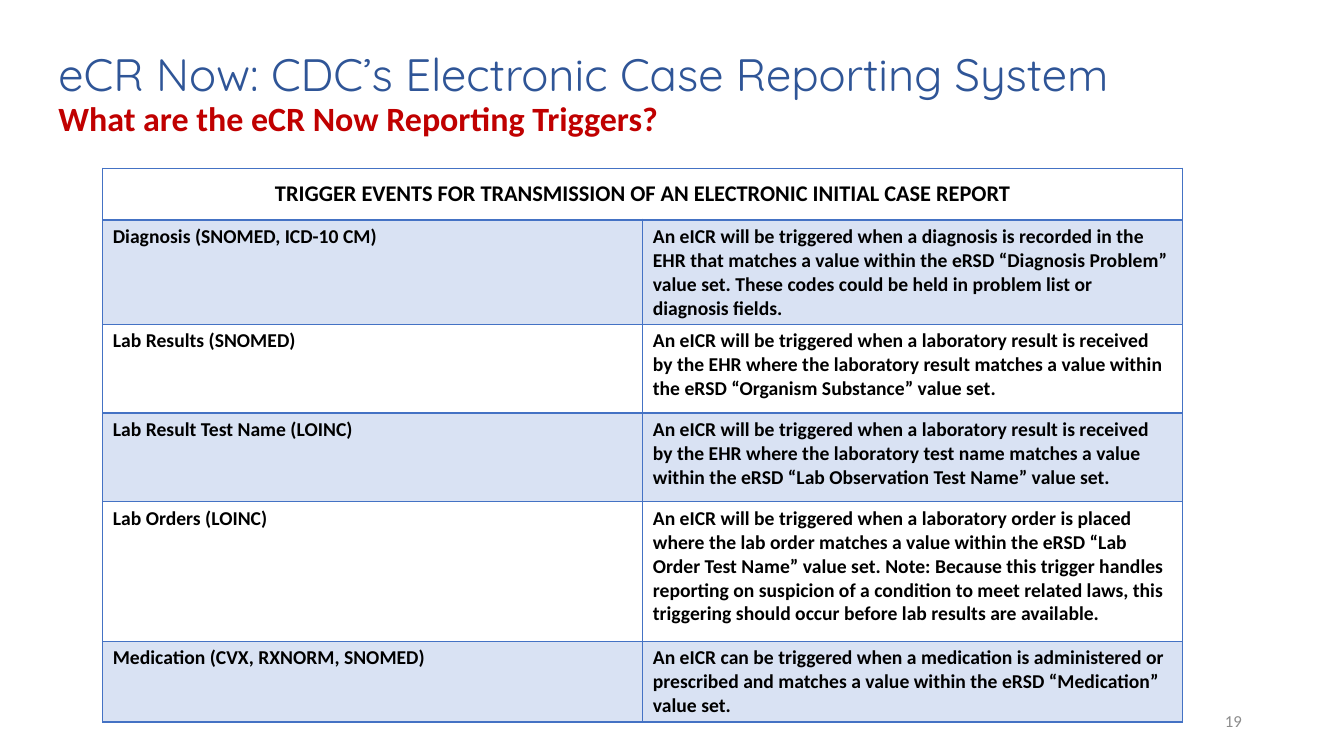
from lxml import etree
from pptx import Presentation
from pptx.dml.color import RGBColor
from pptx.enum.text import MSO_ANCHOR, MSO_AUTO_SIZE, PP_ALIGN
from pptx.oxml.ns import qn
from pptx.util import Cm, Pt

MIDDLE, TOP = MSO_ANCHOR.MIDDLE, MSO_ANCHOR.TOP
LEFT, CENTER, RIGHT = PP_ALIGN.LEFT, PP_ALIGN.CENTER, PP_ALIGN.RIGHT
NO_AUTOFIT = MSO_AUTO_SIZE.NONE
TITLE_ONLY = 5

TITLE_BLUE = RGBColor(0x2F, 0x55, 0x97)
SUBTITLE_RED = RGBColor(0xC0, 0x00, 0x00)
TABLE_BLUE = RGBColor(0x44, 0x72, 0xC4)
PAGE_GRAY = RGBColor(0x8C, 0x8C, 0x8C)
BLACK = RGBColor(0x00, 0x00, 0x00)

HEADING = "TRIGGER EVENTS FOR TRANSMISSION OF AN ELECTRONIC INITIAL CASE REPORT"
TRIGGERS = [
    ("Diagnosis (SNOMED, ICD-10 CM)",
     "An eICR will be triggered when a diagnosis is recorded in the EHR that "
     "matches a value within the eRSD “Diagnosis Problem” value set. These codes "
     "could be held in problem list or diagnosis fields."),
    ("Lab Results (SNOMED)",
     "An eICR will be triggered when a laboratory result is received by the EHR "
     "where the laboratory result matches a value within the eRSD “Organism "
     "Substance” value set."),
    ("Lab Result Test Name (LOINC)",
     "An eICR will be triggered when a laboratory result is received by the EHR "
     "where the laboratory test name matches a value within the eRSD “Lab "
     "Observation Test Name” value set."),
    ("Lab Orders (LOINC)",
     "An eICR will be triggered when a laboratory order is placed where the lab "
     "order matches a value within the eRSD “Lab Order Test Name” value set. Note: "
     "Because this trigger handles reporting on suspicion of a condition to meet "
     "related laws, this triggering should occur before lab results are available."),
    ("Medication (CVX, RXNORM, SNOMED)",
     "An eICR can be triggered when a medication is administered or prescribed and "
     "matches a value within the eRSD “Medication” value set."),
]
ROW_HEIGHTS = [1.3, 2.24, 2.24, 2.24, 3.51, 1.75]
COLUMN_WIDTH = 13.61


def format_run(run, size, color, bold=False, font="Calibri"):
    run.font.name = font
    run.font.size = Pt(size)
    run.font.bold = bold
    run.font.color.rgb = color


def set_title(slide):
    title = slide.shapes.title
    title.left, title.top, title.width, title.height = (
        Cm(1.22), Cm(1.19), Cm(30.61), Cm(2.44))
    frame = title.text_frame
    frame.auto_size = NO_AUTOFIT
    frame.word_wrap = True
    frame.vertical_anchor = MIDDLE
    heading = frame.paragraphs[0]
    heading.text = ("eCR Now: CDC’s Electronic Case Reporting System\v"
                    "What are the eCR Now Reporting Triggers?")
    heading.alignment = LEFT
    heading.line_spacing = 0.9
    system, question = heading.runs
    format_run(system, 32.4, TITLE_BLUE, font="Quicksand")
    format_run(question, 24.3, SUBTITLE_RED, bold=True)


def add_page_number(slide, number):
    box = slide.shapes.add_textbox(Cm(23.93), Cm(17.65), Cm(7.62), Cm(1.02))
    frame = box.text_frame
    frame.word_wrap = True
    frame.vertical_anchor = MIDDLE
    frame.text = number
    frame.paragraphs[0].alignment = RIGHT
    format_run(frame.paragraphs[0].runs[0], 12, PAGE_GRAY)


def set_borders(cell, bottom_width):
    properties = cell._tc.get_or_add_tcPr()
    for side, width in (("L", 1), ("R", 1), ("T", 1), ("B", bottom_width)):
        line = etree.SubElement(properties, qn(f"a:ln{side}"), w=str(Pt(width)))
        fill = etree.SubElement(line, qn("a:solidFill"))
        etree.SubElement(fill, qn("a:srgbClr"), val=str(TABLE_BLUE))


def tint(cell):
    """Fill the cell with the table blue at 20 % opacity."""
    cell.fill.solid()
    cell.fill.fore_color.rgb = TABLE_BLUE
    color = cell._tc.tcPr.find(qn("a:solidFill")).find(qn("a:srgbClr"))
    etree.SubElement(color, qn("a:alpha"), val="20000")


def write_cell(cell, text, size, alignment=LEFT, anchor=TOP):
    cell.text = text
    cell.vertical_anchor = anchor
    paragraph = cell.text_frame.paragraphs[0]
    paragraph.alignment = alignment
    format_run(paragraph.runs[0], size, BLACK, bold=True)


def add_trigger_table(slide):
    table = slide.shapes.add_table(
        len(ROW_HEIGHTS), 2, Cm(2.59), Cm(4.24),
        Cm(2 * COLUMN_WIDTH), Cm(sum(ROW_HEIGHTS))).table
    for column in table.columns:
        column.width = Cm(COLUMN_WIDTH)
    for index, (row, height) in enumerate(zip(table.rows, ROW_HEIGHTS)):
        row.height = Cm(height)
        for cell in row.cells:
            set_borders(cell, bottom_width=1 if index else 2)
            if index % 2:
                tint(cell)
            else:
                cell.fill.background()

    table.cell(0, 0).merge(table.cell(0, 1))
    write_cell(table.cell(0, 0), HEADING, 16, CENTER, MIDDLE)
    for index, trigger in enumerate(TRIGGERS, start=1):
        for cell, text in zip(table.rows[index].cells, trigger):
            write_cell(cell, text, 14)


def main():
    presentation = Presentation()
    presentation.slide_width = Cm(33.87)
    presentation.slide_height = Cm(19.05)
    slide = presentation.slides.add_slide(presentation.slide_layouts[TITLE_ONLY])
    set_title(slide)
    add_page_number(slide, "19")
    add_trigger_table(slide)
    presentation.save("out.pptx")


if __name__ == "__main__":
    main()
